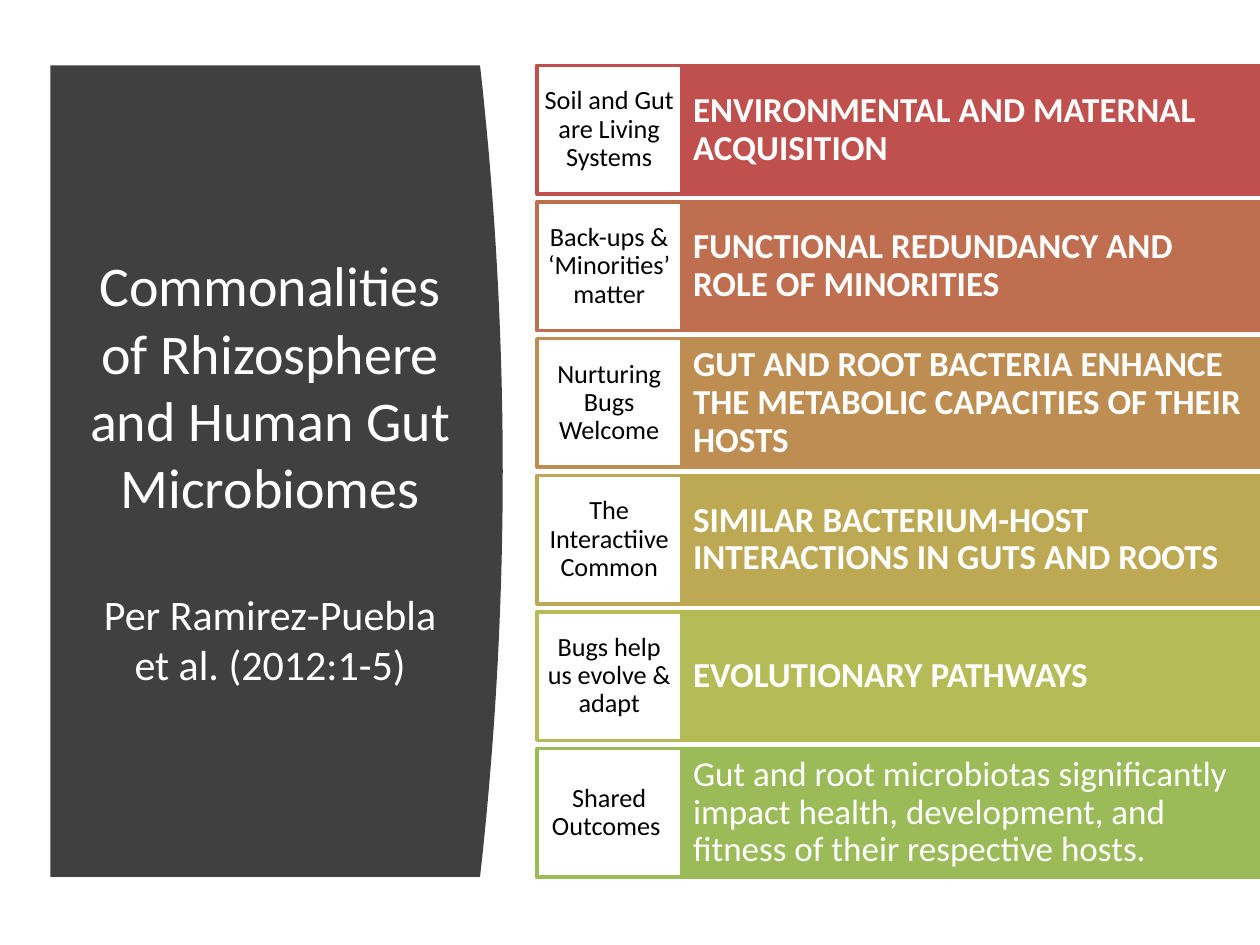
"""Build the slide on what rhizosphere and human gut microbiomes share."""
from dataclasses import dataclass

from pptx import Presentation
from pptx.dml.color import RGBColor
from pptx.enum.shapes import MSO_SHAPE
from pptx.enum.text import MSO_ANCHOR, PP_ALIGN
from pptx.util import Inches, Pt


@dataclass(frozen=True)
class Theme:
    font: str = "Calibri"
    panel: str = "404040"
    light: str = "FFFFFF"
    dark: str = "000000"
    title_size: int = 32
    source_size: int = 24
    heading_size: int = 20
    label_size: int = 15
    border: int = 2


THEME = Theme()
TITLE = "Commonalities of Rhizosphere and Human Gut Microbiomes"
SOURCE = "Per Ramirez-Puebla et al. (2012:1-5)"
ROWS = [
    ("Soil and Gut are Living Systems",
     "ENVIRONMENTAL AND MATERNAL ACQUISITION", "C0504D", True),
    ("Back-ups & ‘Minorities’ matter",
     "FUNCTIONAL REDUNDANCY AND ROLE OF MINORITIES", "BF6F4F", True),
    ("Nurturing Bugs Welcome",
     "GUT AND ROOT BACTERIA ENHANCE THE METABOLIC CAPACITIES OF THEIR HOSTS",
     "BE8D52", True),
    ("The Interactiive Common",
     "SIMILAR BACTERIUM-HOST INTERACTIONS IN GUTS AND ROOTS", "BDA954", True),
    ("Bugs help us evolve & adapt", "EVOLUTIONARY PATHWAYS", "B5BC57", True),
    ("Shared Outcomes ",
     "Gut and root microbiotas significantly impact health, development, "
     "and fitness of their respective hosts.", "9BBB59", False),
]

TOP, BOTTOM = 0.52, 6.96
PANEL_LEFT, PANEL_SHOULDER, PANEL_BULGE = 0.4, 3.81, 0.18
CURVE_STEPS = 40
LABEL_LEFT, LABEL_WIDTH = 4.26, 1.15
HEADING_LEFT, HEADING_WIDTH = 5.41, 4.59
ROW_HEIGHT = 1.02
ROW_PITCH = (BOTTOM - TOP - ROW_HEIGHT) / (len(ROWS) - 1)


def color(value):
    return RGBColor.from_string(value)


def add_run(paragraph, text, size, ink, bold=False):
    run = paragraph.add_run()
    run.text = text
    run.font.name = THEME.font
    run.font.size = Pt(size)
    run.font.bold = bold
    run.font.color.rgb = color(ink)


def set_frame(shape, side, edge):
    frame = shape.text_frame
    frame.word_wrap = True
    frame.vertical_anchor = MSO_ANCHOR.MIDDLE
    frame.margin_left = frame.margin_right = Inches(side)
    frame.margin_top = frame.margin_bottom = Inches(edge)
    return frame


def add_panel(slide):
    half = (BOTTOM - TOP) / 2
    curve = []
    for step in range(CURVE_STEPS + 1):
        offset = 2 * step / CURVE_STEPS - 1
        curve.append((Inches(PANEL_SHOULDER + PANEL_BULGE * (1 - offset ** 2)),
                      Inches(TOP + half * (1 + offset))))
    builder = slide.shapes.build_freeform(Inches(PANEL_LEFT), Inches(TOP))
    builder.add_line_segments(curve + [(Inches(PANEL_LEFT), Inches(BOTTOM))])
    panel = builder.convert_to_shape()
    panel.shadow.inherit = False
    panel.fill.solid()
    panel.fill.fore_color.rgb = color(THEME.panel)
    panel.line.fill.background()


def add_title(slide):
    box = slide.shapes.add_textbox(
        Inches(0.56), Inches(1.11), Inches(3.17), Inches(5.24))
    frame = set_frame(box, 0.1, 0.05)
    title = frame.paragraphs[0]
    source = frame.add_paragraph()
    source.space_before = Pt(39)
    title.alignment = source.alignment = PP_ALIGN.CENTER
    add_run(title, TITLE, THEME.title_size, THEME.light)
    add_run(source, SOURCE, THEME.source_size, THEME.light)


def add_block(slide, left, top, width, fill, border, margins, alignment):
    block = slide.shapes.add_shape(
        MSO_SHAPE.RECTANGLE, Inches(left), Inches(top),
        Inches(width), Inches(ROW_HEIGHT))
    block.shadow.inherit = False
    block.fill.solid()
    block.fill.fore_color.rgb = color(fill)
    block.line.color.rgb = color(border)
    block.line.width = Pt(THEME.border)
    paragraph = set_frame(block, *margins).paragraphs[0]
    paragraph.alignment = alignment
    paragraph.line_spacing = 0.9
    return paragraph


def add_rows(slide):
    for index, (label, heading, accent, bold) in enumerate(ROWS):
        top = TOP + index * ROW_PITCH
        paragraph = add_block(slide, HEADING_LEFT, top, HEADING_WIDTH, accent,
                              accent, (0.09, 0.26), PP_ALIGN.LEFT)
        add_run(paragraph, heading, THEME.heading_size, THEME.light, bold)
        paragraph = add_block(slide, LABEL_LEFT, top, LABEL_WIDTH, THEME.light,
                              accent, (0.06, 0.1), PP_ALIGN.CENTER)
        add_run(paragraph, label, THEME.label_size, THEME.dark)


def main():
    presentation = Presentation()
    presentation.slide_width = Inches(10)
    presentation.slide_height = Inches(7.5)
    slide = presentation.slides.add_slide(presentation.slide_layouts[6])
    add_panel(slide)
    add_title(slide)
    add_rows(slide)
    presentation.save("out.pptx")


if __name__ == "__main__":
    main()
